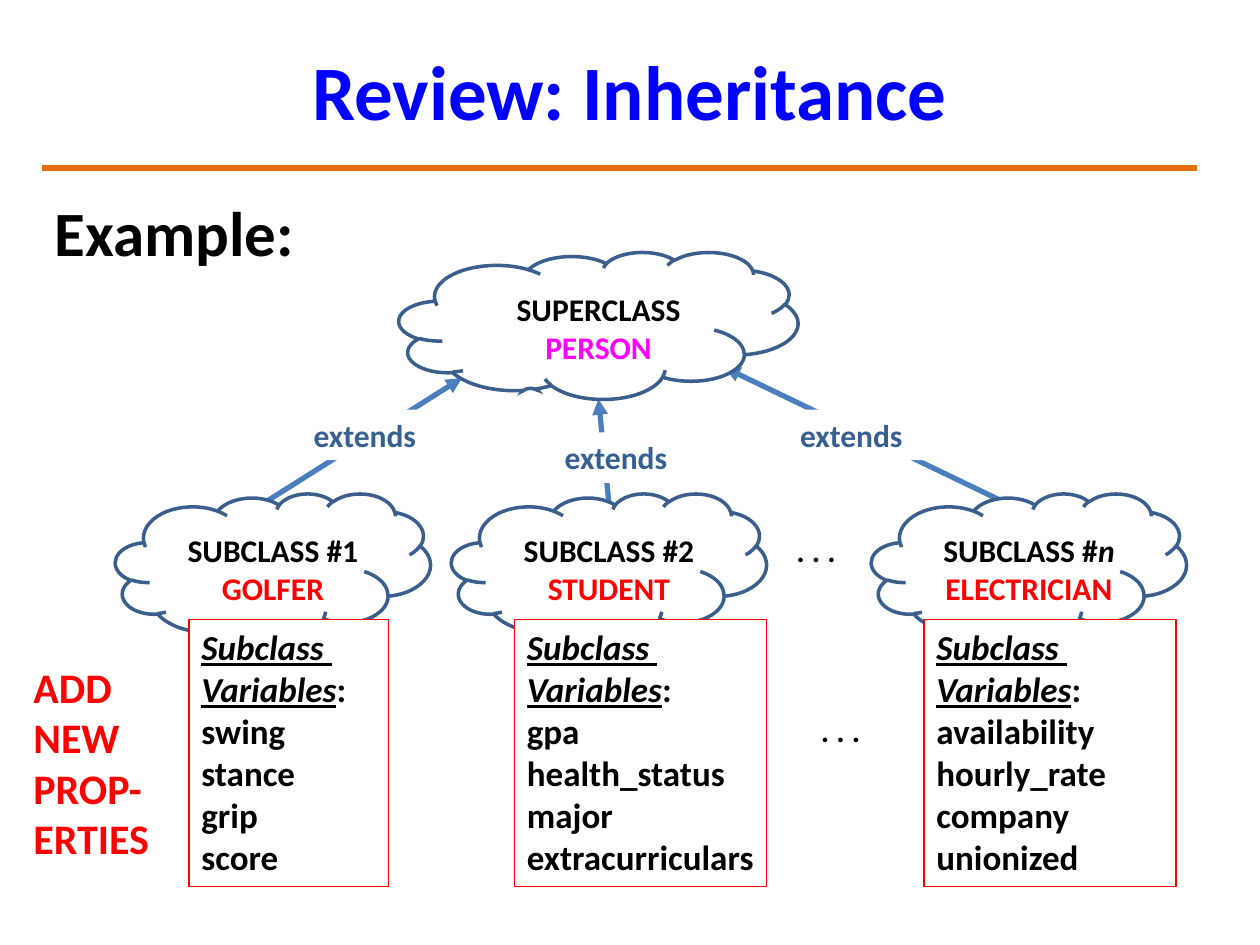
from typing import NamedTuple

from lxml.etree import SubElement
from pptx import Presentation
from pptx.dml.color import RGBColor
from pptx.enum.shapes import MSO_CONNECTOR as Connector, MSO_SHAPE as Preset
from pptx.enum.text import MSO_ANCHOR as Anchor, MSO_AUTO_SIZE as AutoSize, PP_ALIGN as Align
from pptx.oxml.ns import qn
from pptx.util import Pt

COLORS = {
    "black": "000000", "white": "FFFFFF", "title": "0000FF", "rule": "E46C0A",
    "arrow": "4B7EBC", "cloud": "3A5F8C", "extends": "376092",
    "parent": "FF00FF", "red": "FF0000",
}


class Box(NamedTuple):
    left: float
    top: float
    width: float
    height: float


class Run(NamedTuple):
    text: str
    color: str = "black"
    italic: bool = False
    underline: bool = False


class Subclass(NamedTuple):
    cloud_left: float
    number: list[Run]
    name: str
    list_left: float
    list_width: float
    variables: list[str]


class Extends(NamedTuple):
    start: tuple[float, float]
    end: tuple[float, float]


def rgb(name: str) -> RGBColor:
    return RGBColor.from_string(COLORS[name])


def write(shape, lines: list[list[Run]], size: float, align=Align.LEFT) -> None:
    frame = shape.text_frame
    for index, line in enumerate(lines):
        para = frame.paragraphs[0] if index == 0 else frame.add_paragraph()
        para.alignment = align
        for part in line:
            span = para.add_run()
            span.text = part.text
            font = span.font
            font.name, font.size, font.bold = "Calibri", Pt(size), True
            font.italic, font.underline = part.italic, part.underline
            font.color.rgb = rgb(part.color)


def fit(shape) -> None:
    frame = shape.text_frame
    frame.word_wrap = True
    frame.auto_size = AutoSize.SHAPE_TO_FIT_TEXT
    frame.vertical_anchor = Anchor.TOP


def add_text(page, box: Box, lines: list[list[Run]], size: float, align=Align.LEFT) -> None:
    shape = page.shapes.add_textbox(*map(Pt, box))
    fit(shape)
    write(shape, lines, size, align)


def add_panel(page, preset, box: Box, line: str | None = None, weight: float = 2):
    shape = page.shapes.add_shape(preset, *map(Pt, box))
    shape.shadow.inherit = False
    shape.fill.solid()
    shape.fill.fore_color.rgb = rgb("white")
    if line:
        shape.line.color.rgb = rgb(line)
        shape.line.width = Pt(weight)
    else:
        shape.line.fill.background()
    return shape


def add_line(page, start, end, color: str, arrow: bool = False) -> None:
    line = page.shapes.add_connector(Connector.STRAIGHT, *map(Pt, (*start, *end)))
    line.line.color.rgb = rgb(color)
    line.line.width = Pt(3)
    if arrow:
        SubElement(line.line._get_or_add_ln(), qn("a:headEnd"), type="triangle")
    SubElement(line._element.spPr, qn("a:effectLst"))


def add_extends_label(page, left: float, top: float, indent: float | None = None) -> None:
    label = add_panel(page, Preset.RECTANGLE, Box(left, top, 114, 29))
    fit(label)
    if indent is not None:
        label.text_frame.margin_left = Pt(indent)
    align = Align.CENTER if indent is None else Align.LEFT
    write(label, [[Run("extends", "extends")]], 18, align)


def add_subclass(page, item: Subclass) -> None:
    add_panel(page, Preset.CLOUD_CALLOUT, Box(item.cloud_left, 282, 180, 84), "cloud")
    add_text(page, Box(item.cloud_left + 23.75, 300, 132.5, 51),
             [[*item.number, Run(item.name, "red")]], 18, Align.CENTER)
    panel = add_panel(page, Preset.RECTANGLE,
                      Box(item.list_left, 354, item.list_width, 152.6), "red", 0.75)
    fit(panel)
    heading = [[Run("Subclass ", italic=True, underline=True)],
               [Run("Variables", italic=True, underline=True), Run(":")]]
    write(panel, heading + [[Run(name)] for name in item.variables], 20)


SUBCLASSES = [
    Subclass(66, [Run("SUBCLASS #1 ")], "GOLFER", 108, 114,
             ["swing", "stance", "grip", "score"]),
    Subclass(258, [Run("SUBCLASS #2 ")], "STUDENT", 294, 144,
             ["gpa", "health_status", "major", "extracurriculars"]),
    Subclass(498, [Run("SUBCLASS #"), Run("n ", italic=True)], "ELECTRICIAN", 528, 144,
             ["availability", "hourly_rate", "company", "unionized"]),
]
ARROWS = [
    Extends((264, 216), (150, 288)),
    Extends((342, 228), (348, 288)),
    Extends((414, 210), (576, 288)),
]


def main() -> None:
    deck = Presentation()
    deck.slide_width, deck.slide_height = Pt(720), Pt(540)
    page = deck.slides.add_slide(deck.slide_layouts[5])

    title = page.shapes.title
    title.left, title.top, title.width, title.height = map(Pt, Box(36, 6, 648, 90))
    title.text_frame.vertical_anchor = Anchor.MIDDLE
    write(title, [[Run("Review: Inheritance", "title")]], 44, Align.CENTER)
    add_text(page, Box(24, 107, 684, 51), [[Run("Example:")]], 36)
    add_line(page, (24, 96), (684, 96), "rule")

    for arrow in ARROWS:
        add_line(page, arrow.start, arrow.end, "arrow", arrow=True)
    add_extends_label(page, 156, 234, 23.2)
    add_extends_label(page, 438, 234, 19.2)

    add_panel(page, Preset.CLOUD_CALLOUT, Box(228, 144, 228, 84), "cloud")
    add_text(page, Box(258, 162, 168, 51),
             [[Run("SUPERCLASS "), Run("PERSON", "parent")]], 18, Align.CENTER)
    add_panel(page, Preset.OVAL, Box(291.6, 224.6, 24, 24), "white")
    add_extends_label(page, 295, 247)

    for item in SUBCLASSES:
        add_subclass(page, item)
    for left, top in [(448, 300), (462, 403)]:
        add_text(page, Box(left, top, 48, 29), [[Run(". . .")]], 18)
    add_text(page, Box(12, 374.4, 84, 124),
             [[Run(word, "red")] for word in ("ADD", "NEW", "PROP-ERTIES")], 24)

    deck.save("out.pptx")


if __name__ == "__main__":
    main()
